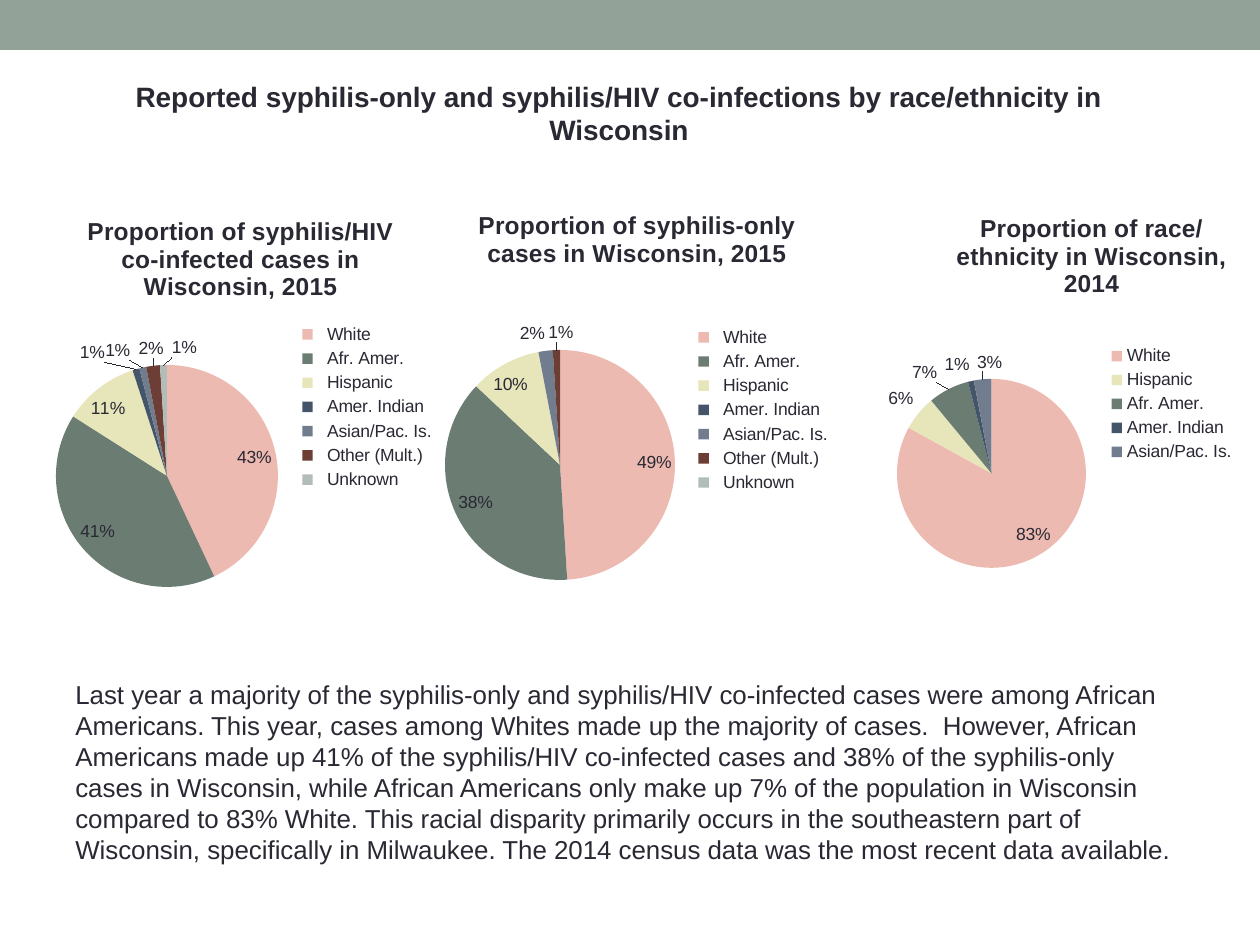
from lxml import etree
from pptx import Presentation
from pptx import util as u
from pptx.chart.data import CategoryChartData
from pptx.dml.color import RGBColor
from pptx.enum import chart as charts, shapes, text
from pptx.oxml.ns import qn

PX = 914400 / 126
FONT = "Arial"
COLORS = {
    "band": "93A299", "text": "292934",
    "White": "EDBAB1", "Afr. Amer.": "6B7D72", "Hispanic": "E7E5BA",
    "Amer. Indian": "445469", "Asian/Pac. Is.": "717D8E",
    "Other (Mult.)": "6C3E36", "Unknown": "B3BDB7",
}


def px(*lengths):
    return [u.Emu(round(length * PX)) for length in lengths]


def write(frame, words, size, bold=False, align=text.PP_ALIGN.LEFT):
    frame.word_wrap = True
    paragraph = frame.paragraphs[0]
    paragraph.alignment = align
    run = paragraph.add_run()
    run.text = words
    font = run.font
    font.name, font.size, font.bold = FONT, u.Pt(size), bold
    font.color.rgb = RGBColor.from_string(COLORS["text"])


presentation = Presentation()
presentation.slide_width, presentation.slide_height = px(1260, 945)
slide = presentation.slides.add_slide(presentation.slide_layouts[5])

# Top band
band = slide.shapes.add_shape(shapes.MSO_SHAPE.RECTANGLE, *px(0, 0, 1260, 50))
band.shadow.inherit = False
band.fill.solid()
band.fill.fore_color.rgb = RGBColor.from_string(COLORS["band"])
band.line.fill.background()

# Title
title = slide.shapes.title
title.left, title.top, title.width, title.height = px(73, 73, 1092, 81)
title.text_frame.vertical_anchor = text.MSO_ANCHOR.TOP
write(title.text_frame, "Reported syphilis-only and syphilis/HIV co-infections "
      "by race/ethnicity in Wisconsin", 16, bold=True, align=text.PP_ALIGN.CENTER)

# Pie charts: frame, title corner, pie and legend boxes are in slide px
groups = ["White", "Afr. Amer.", "Hispanic", "Amer. Indian", "Asian/Pac. Is.",
          "Other (Mult.)", "Unknown"]
census_groups = ["White", "Hispanic", "Afr. Amer.", "Amer. Indian", "Asian/Pac. Is."]
pies = [
    ("Proportion of syphilis/HIV co-infected cases in Wisconsin, 2015",
     groups, "  ", [43, 41, 11, 1, 1, 2, 1],
     (21, 189, 431, 436), (83, 211), (56, 365, 222, 222), (292, 320, 150, 174)),
    ("Proportion of syphilis-only cases in Wisconsin, 2015",
     groups, "  ", [49, 38, 10, 0, 2, 1, 0],
     (420, 189, 428, 442), (474, 205), (445, 350, 230, 230), (688, 323, 150, 174)),
    ("Proportion of race/ethnicity in Wisconsin, 2014",
     census_groups, "", [83, 6, 7, 1, 3],
     (861, 189, 388, 431), (952, 208), (897, 379, 189, 189), (1104, 342, 135, 124)),
]
for heading, names, indent, shares, frame, corner, pie_box, legend_box in pies:
    data = CategoryChartData(number_format="0")
    data.categories = [indent + name for name in names]
    data.add_series("Series 1", shares)
    chart = slide.shapes.add_chart(charts.XL_CHART_TYPE.PIE, *px(*frame), data).chart
    chart.font.name, chart.font.size = FONT, u.Pt(10)
    chart.font.color.rgb = RGBColor.from_string(COLORS["text"])
    chart.has_title = True
    write(chart.chart_title.text_frame, heading, 14, bold=True,
          align=text.PP_ALIGN.CENTER)
    chart.has_legend = True
    chart.legend.position = charts.XL_LEGEND_POSITION.RIGHT
    chart.legend.include_in_layout = False

    plot = chart.plots[0]
    plot.vary_by_categories = True
    for index, name in enumerate(names):
        fill = plot.series[0].points[index].format.fill
        fill.solid()
        fill.fore_color.rgb = RGBColor.from_string(COLORS[name])
    plot.has_data_labels = True
    labels = plot.data_labels
    labels.show_percentage, labels.show_value = True, False
    labels.number_format, labels.number_format_is_linked = "0%;;", False
    labels.position = charts.XL_LABEL_POSITION.BEST_FIT

    # Fixed places inside the chart, as fractions of its frame
    root = chart._chartSpace.chart
    for tag, index, box in (("c:title", 1, corner), ("c:plotArea", 0, pie_box),
                            ("c:legend", 1, legend_box)):
        part = root.find(qn(tag))
        for old in part.findall(qn("c:layout")):
            part.remove(old)
        layout = etree.Element(qn("c:layout"))
        manual = etree.SubElement(layout, qn("c:manualLayout"))
        settings = [("xMode", "edge"), ("yMode", "edge")]
        if tag == "c:plotArea":
            settings.insert(0, ("layoutTarget", "inner"))
        starts = (frame[0], frame[1], 0, 0)
        sizes = (frame[2], frame[3], frame[2], frame[3])
        for key, length, start, size in zip("xywh", box, starts, sizes):
            settings.append((key, f"{(length - start) / size:.4f}"))
        for key, value in settings:
            etree.SubElement(manual, qn(f"c:{key}")).set("val", value)
        part.insert(index, layout)

# Commentary
body = slide.shapes.add_textbox(*px(63, 672, 1134, 220))
write(body.text_frame, "Last year a majority of the syphilis-only and syphilis/HIV "
      "co-infected cases were among African Americans. This year, cases among Whites "
      "made up the majority of cases.  However, African Americans made up 41% of the "
      "syphilis/HIV co-infected cases and 38% of the syphilis-only cases in Wisconsin, "
      "while African Americans only make up 7% of the population in Wisconsin compared "
      "to 83% White. This racial disparity primarily occurs in the southeastern part of "
      "Wisconsin, specifically in Milwaukee. The 2014 census data was the most recent "
      "data available.", 14.8)

presentation.save("out.pptx")
